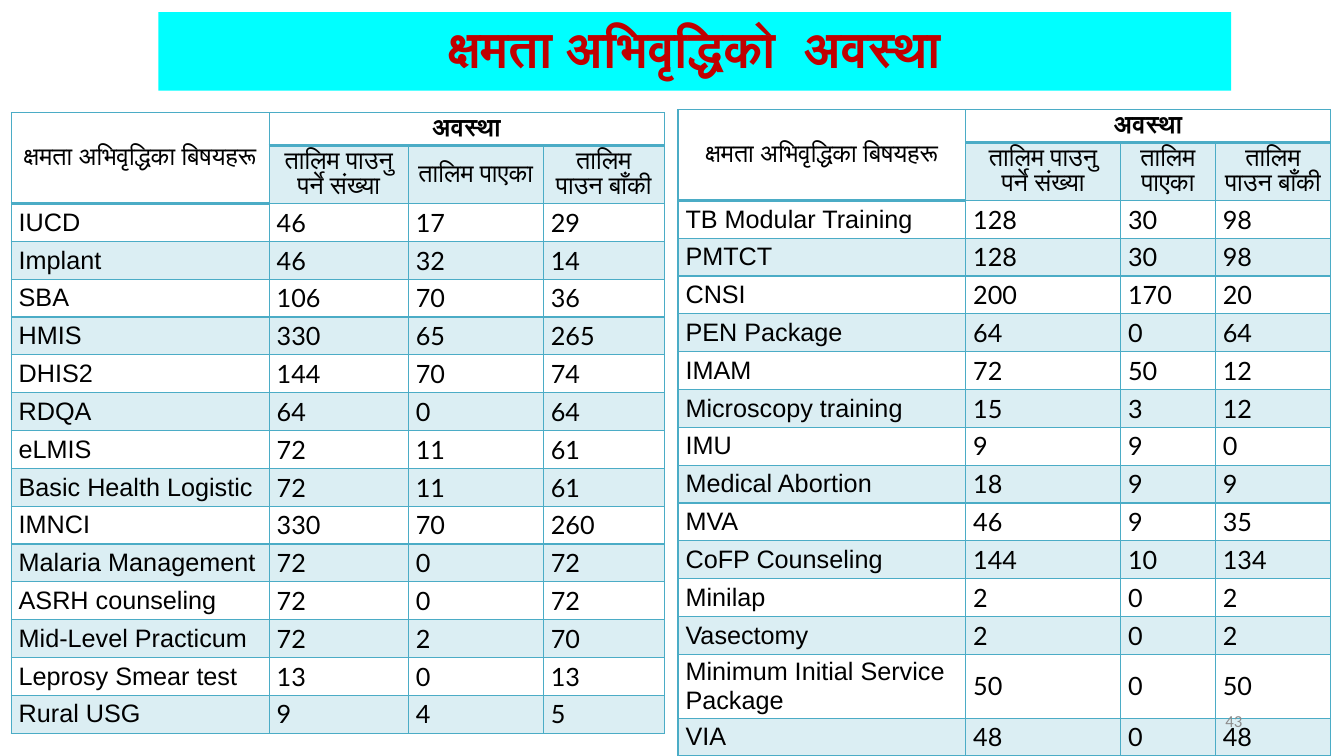
from dataclasses import dataclass

from lxml import etree
from pptx import Presentation, util as u
from pptx.dml.color import RGBColor
from pptx.enum import text
from pptx.oxml import ns

CYAN = RGBColor(0x00, 0xFF, 0xFF)
RED = RGBColor(0xC0, 0x00, 0x00)
TEAL = RGBColor(0x4B, 0xAC, 0xC6)
BLACK = RGBColor(0x00, 0x00, 0x00)
GREY = RGBColor(0x8C, 0x8C, 0x8C)

SLIDE_W, SLIDE_H = u.Inches(13.33), u.Inches(7.5)
SIDE_MARGIN, EDGE_MARGIN = u.Pt(5.4), u.Pt(2.7)
HEAD_ROWS = 2
HEAD_HEIGHTS = (4.3, 7.6)
BODY_HEIGHT = 4.9
TOPIC_HEAD = "क्षमता अभिवृद्धिका बिषयहरू"
STATUS_HEAD = "अवस्था"
STATUS_COLUMNS = ("तालिम पाउनु पर्ने संख्या", "तालिम पाएका", "तालिम पाउन बाँकी")


@dataclass(frozen=True)
class Training:
    topic: str
    needed: int
    trained: int
    remaining: int

    def cells(self) -> tuple[str, ...]:
        return self.topic, str(self.needed), str(self.trained), str(self.remaining)


@dataclass(frozen=True)
class TrainingTable:
    """Position and column widths are percentages of the slide's size."""
    left: float
    top: float
    columns: tuple[float, ...]
    trainings: tuple[Training, ...]


TABLES = (
    TrainingTable(0.83, 14.93, (19.2, 10.35, 10.05, 9), (
        Training("IUCD", 46, 17, 29),
        Training("Implant", 46, 32, 14),
        Training("SBA", 106, 70, 36),
        Training("HMIS", 330, 65, 265),
        Training("DHIS2", 144, 70, 74),
        Training("RDQA", 64, 0, 64),
        Training("eLMIS", 72, 11, 61),
        Training("Basic Health Logistic", 72, 11, 61),
        Training("IMNCI", 330, 70, 260),
        Training("Malaria Management", 72, 0, 72),
        Training("ASRH counseling", 72, 0, 72),
        Training("Mid-Level Practicum", 72, 2, 70),
        Training("Leprosy Smear test", 13, 0, 13),
        Training("Rural USG", 9, 4, 5),
    )),
    TrainingTable(50.45, 14.5, (21.4, 11.53, 7.05, 8.58), (
        Training("TB Modular Training", 128, 30, 98),
        Training("PMTCT", 128, 30, 98),
        Training("CNSI", 200, 170, 20),
        Training("PEN Package", 64, 0, 64),
        Training("IMAM", 72, 50, 12),
        Training("Microscopy training", 15, 3, 12),
        Training("IMU", 9, 9, 0),
        Training("Medical Abortion", 18, 9, 9),
        Training("MVA", 46, 9, 35),
        Training("CoFP Counseling", 144, 10, 134),
        Training("Minilap", 2, 0, 2),
        Training("Vasectomy", 2, 0, 2),
        Training("Minimum Initial Service Package", 50, 0, 50),
        Training("VIA", 48, 0, 48),
    )),
)


def across(percent: float) -> u.Emu:
    return u.Emu(round(SLIDE_W * percent / 100))


def down(percent: float) -> u.Emu:
    return u.Emu(round(SLIDE_H * percent / 100))


def style(p, size: float, name: str, color: RGBColor, align=None, bold=False) -> None:
    p.alignment = align
    p.font.size, p.font.name, p.font.bold = u.Pt(size), name, bold
    p.font.color.rgb = color


def set_margins(holder) -> None:
    """Inset the text of a cell or a text frame."""
    holder.margin_left = holder.margin_right = SIDE_MARGIN
    holder.margin_top = holder.margin_bottom = EDGE_MARGIN


def set_borders(cell, bottom_width: float) -> None:
    tc_pr = cell._tc.get_or_add_tcPr()
    for side in "LRTB":
        width = u.Pt(bottom_width if side == "B" else 1)
        ln = etree.SubElement(tc_pr, ns.qn(f"a:ln{side}"), w=str(width))
        fill = etree.SubElement(ln, ns.qn("a:solidFill"))
        etree.SubElement(fill, ns.qn("a:srgbClr"), val=str(TEAL))


def set_band(cell) -> None:
    """Fill the cell with teal at 20 percent opacity."""
    cell.fill.solid()
    cell.fill.fore_color.rgb = TEAL
    color = cell._tc.tcPr.find(ns.qn("a:solidFill")).find(ns.qn("a:srgbClr"))
    etree.SubElement(color, ns.qn("a:alpha"), val="20000")


def fill_cell(cell, row: int, col: int, words: str) -> None:
    is_head = row < HEAD_ROWS
    set_borders(cell, 2 if row == 0 or (row == 1 and col == 0) else 1)
    if row % 2 and not (is_head and col == 0):
        set_band(cell)
    else:
        cell.fill.background()
    cell.vertical_anchor = text.MSO_ANCHOR.MIDDLE
    set_margins(cell)
    cell.text = words
    style(cell.text_frame.paragraphs[0], 18,
          "Arial" if is_head or col == 0 else "Lato", BLACK,
          text.PP_ALIGN.CENTER if is_head else None, row == 0 and col > 0)


def add_training_table(s, layout: TrainingTable) -> None:
    rows = [(TOPIC_HEAD, STATUS_HEAD, "", ""), ("", *STATUS_COLUMNS),
            *(training.cells() for training in layout.trainings)]
    heights = [*HEAD_HEIGHTS, *[BODY_HEIGHT] * len(layout.trainings)]
    table = s.shapes.add_table(
        len(rows), len(layout.columns), across(layout.left), down(layout.top),
        across(sum(layout.columns)), down(sum(heights))).table
    table.first_row = table.horz_banding = False
    for column, width in zip(table.columns, layout.columns):
        column.width = across(width)
    for i, (height, words) in enumerate(zip(heights, rows)):
        table.rows[i].height = down(height)
        for j, word in enumerate(words):
            fill_cell(table.cell(i, j), i, j, word)
    table.cell(0, 0).merge(table.cell(1, 0))
    table.cell(0, 1).merge(table.cell(0, 3))


def add_title(s) -> None:
    sp = s.shapes.title
    sp.left, sp.top, sp.width, sp.height = across(11.78), down(1.6), across(79.82), down(10.4)
    sp.fill.solid()
    sp.fill.fore_color.rgb = CYAN
    tf = sp.text_frame
    tf.text = "क्षमता अभिवृद्धिको  अवस्था"
    tf.word_wrap, tf.auto_size = True, text.MSO_AUTO_SIZE.NONE
    tf.vertical_anchor = text.MSO_ANCHOR.MIDDLE
    set_margins(tf)
    p = tf.paragraphs[0]
    p.line_spacing = 0.9
    style(p, 36, "Arial", RED, text.PP_ALIGN.CENTER, bold=True)


def add_page_number(s) -> None:
    tf = s.shapes.add_textbox(across(70.67), down(92.67), across(22.5), down(5.33)).text_frame
    tf.word_wrap, tf.vertical_anchor = True, text.MSO_ANCHOR.MIDDLE
    tf.text = "43"
    style(tf.paragraphs[0], 12, "Calibri", GREY, text.PP_ALIGN.RIGHT)


def main() -> None:
    prs = Presentation()
    prs.slide_width, prs.slide_height = SLIDE_W, SLIDE_H
    s = prs.slides.add_slide(prs.slide_layouts[5])
    add_title(s)
    for training_table in TABLES:
        add_training_table(s, training_table)
    add_page_number(s)
    prs.save("out.pptx")


if __name__ == "__main__":
    main()
